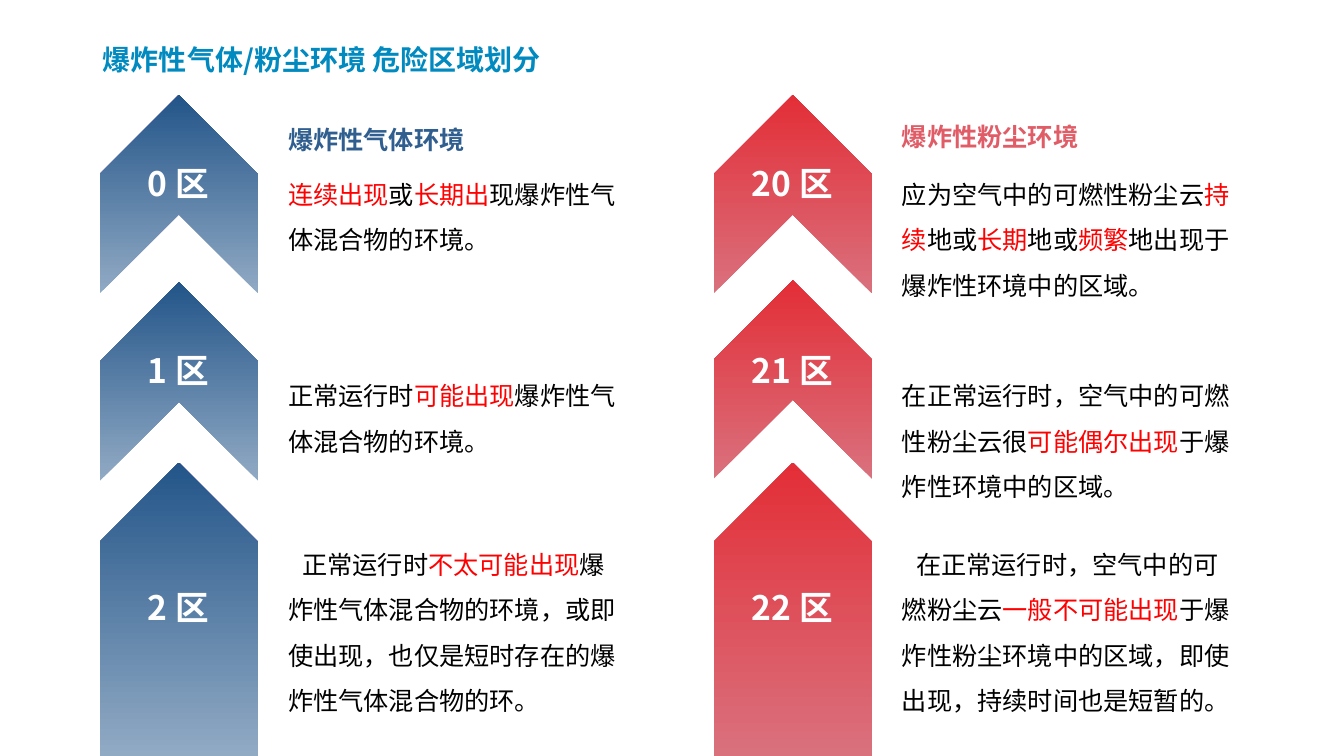
"""Build the slide on hazardous zones for explosive gas and dust."""
from lxml.etree import SubElement
from pptx import Presentation
from pptx.dml.color import RGBColor
from pptx.enum.shapes import MSO_SHAPE
from pptx.enum.text import MSO_ANCHOR, MSO_AUTO_SIZE, PP_ALIGN
from pptx.oxml.ns import qn
from pptx.util import Cm, Pt

FACE = "Noto Sans CJK SC"
HUES = {"title": "008AC0", "text": "000000", "key": "FF0000", "label": "FFFFFF"}
FORMS = {
    "title": {"size": Pt(20), "bold": True, "name": FACE},
    "head": {"size": Pt(18), "bold": True, "name": FACE},
    "body": {"size": Pt(18), "bold": False, "name": FACE},
    "label": {"size": Pt(24), "bold": True, "name": FACE},
}
SIDES = [
    {
        "left": 0, "head": "爆炸性气体环境", "top": 2.62, "hue": "2F5E8F",
        "fade": ("91AAC4", "235589"), "tips": (2.9, 7.62, 13.36),
        "zones": [
            ("0 区", "*连续出现*或*长期出*现爆炸性气体混合物的环境。"),
            ("1 区", "正常运行时*可能出现*爆炸性气体混合物的环境。"),
            ("2 区", "正常运行时*不太可能出现*爆炸性气体混合物的环境，"
                    "或即使出现，也仅是短时存在的爆炸性气体混合物的环。"),
        ],
    },
    {
        "left": 15.47, "head": "爆炸性粉尘环境", "top": 2.54, "hue": "E05D67",
        "fade": ("D9717D", "E32E37"), "tips": (2.9, 7.57, 13.36),
        "zones": [
            ("20 区", "应为空气中的可燃性粉尘云*持续*地或*长期*地或*频繁*"
                     "地出现于爆炸性环境中的区域。"),
            ("21 区", "在正常运行时，空气中的可燃性粉尘云很*可能偶尔出现*"
                     "于爆炸性环境中的区域。"),
            ("22 区", "在正常运行时，空气中的可燃粉尘云*一般不可能出现*"
                     "于爆炸性粉尘环境中的区域，即使出现，持续时间也是短暂的。"),
        ],
    },
]
ROWS = [
    {"form": MSO_SHAPE.CHEVRON, "long": 5, "label": 3.48, "body": 4.01, "high": 3.1},
    {"form": MSO_SHAPE.CHEVRON, "long": 5, "label": 8.18, "body": 9.09, "high": 3.1},
    {"form": MSO_SHAPE.PENTAGON, "long": 7.39, "label": 14.15, "body": 13.34, "high": 4.88},
]
WIDE = 3.99
MID = 4.51


def write(par, text, form, hue):
    """Add runs to a paragraph, with starred parts in the key colour."""
    for i, part in enumerate(text.split("*")):
        if part:
            run = par.add_run()
            run.text = part
            for key, value in FORMS[form].items():
                setattr(run.font, key, value)
            run.font.color.rgb = RGBColor.from_string(HUES["key"] if i % 2 else hue)
            SubElement(run.font._element, qn("a:ea"), typeface=FACE)


def add_text(box, text, form, hue):
    """Add a text box and return its paragraph."""
    frame = slide.shapes.add_textbox(*map(Cm, box)).text_frame
    frame.word_wrap = True
    frame.auto_size = MSO_AUTO_SIZE.SHAPE_TO_FIT_TEXT
    par = frame.paragraphs[0]
    par.line_spacing = 1.5
    write(par, text, form, hue)
    return par


deck = Presentation()
deck.slide_width, deck.slide_height = Cm(33.87), Cm(19.05)
slide = deck.slides.add_slide(deck.slide_layouts[5])

title = slide.shapes.title
title.left, title.top, title.width, title.height = map(Cm, (2.34, 0.91, 16.46, 1.14))
frame = title.text_frame
frame.auto_size = MSO_AUTO_SIZE.NONE
frame.vertical_anchor = MSO_ANCHOR.MIDDLE
frame.margin_bottom = 0
par = frame.paragraphs[0]
par.alignment = PP_ALIGN.LEFT
par.line_spacing = 0.9
write(par, "爆炸性气体/粉尘环境 危险区域划分", "title", HUES["title"])

for side in SIDES:
    left = side["left"]
    add_text((left + 7.01, side["top"], 8.99, 1.4), side["head"], "head", side["hue"])
    for row, tip, (name, note) in zip(ROWS, side["tips"], side["zones"]):
        long = row["long"]
        arrow = slide.shapes.add_shape(
            row["form"], Cm(left + MID - long / 2), Cm(tip), Cm(long), Cm(WIDE))
        arrow.rotation = 270
        arrow.shadow.inherit = False
        arrow.line.fill.background()
        arrow.fill.gradient()
        arrow.fill.gradient_angle = 0
        for stop, hue in zip(arrow.fill.gradient_stops, side["fade"]):
            stop.color.rgb = RGBColor.from_string(hue)
        par = add_text((left + 3.15, row["label"], 2.69, 1.8), name, "label", HUES["label"])
        par.alignment = PP_ALIGN.CENTER
        par = add_text((left + 7.01, row["body"], 8.99, row["high"]), note, "body", HUES["text"])
        if row is ROWS[-1]:
            par._p.get_or_add_pPr().set("indent", str(Cm(0.36)))

deck.save("out.pptx")
